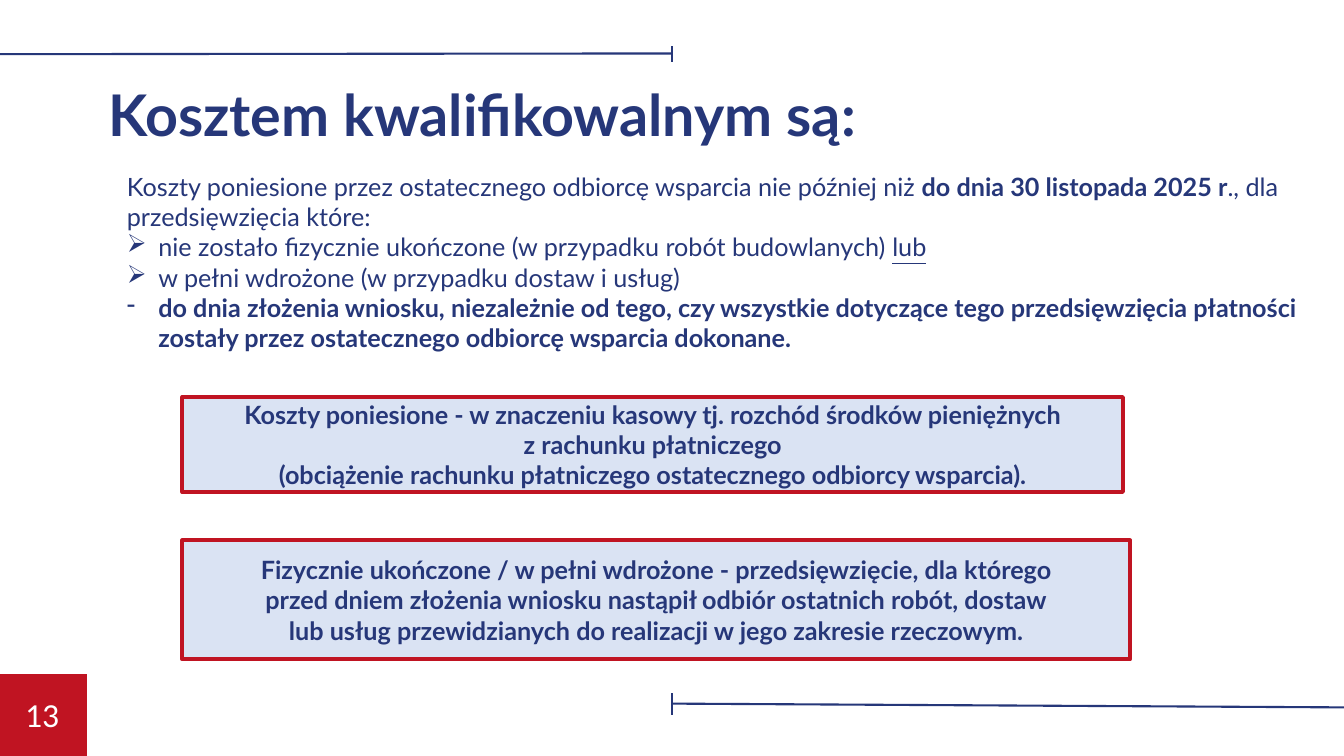
from dataclasses import dataclass

from lxml import etree
from pptx import Presentation
from pptx.dml.color import RGBColor
from pptx.enum.shapes import MSO_CONNECTOR, MSO_SHAPE
from pptx.enum.text import MSO_ANCHOR, PP_ALIGN
from pptx.oxml.ns import qn
from pptx.util import Pt


@dataclass(frozen=True)
class Theme:
    navy: RGBColor = RGBColor(0x26, 0x37, 0x79)
    red: RGBColor = RGBColor(0xC0, 0x14, 0x22)
    pale: RGBColor = RGBColor(0xDA, 0xE3, 0xF3)
    white: RGBColor = RGBColor(0xFF, 0xFF, 0xFF)
    font: str = "Lato"
    number_font: str = "Calibri"
    title: float = 41
    body: float = 18
    number: float = 24
    rule: float = 1.5
    border: float = 3


THEME = Theme()
WIDTH, HEIGHT = 960, 540
INDENT = 22.5

BODY = [
    (None, [("Koszty poniesione przez ostatecznego odbiorcę wsparcia nie później niż ", ""),
            ("do dnia 30 listopada 2025 r", "b"),
            ("., dla przedsięwzięcia które:", "")]),
    ("➢", [("nie zostało fizycznie ukończone (w przypadku robót budowlanych) ", ""),
           ("lub", "u")]),
    ("➢", [("w pełni wdrożone (w przypadku dostaw i usług)", "")]),
    ("-", [("do dnia złożenia wniosku, niezależnie od tego, czy wszystkie dotyczące tego "
            "przedsięwzięcia płatności zostały przez ostatecznego odbiorcę wsparcia dokonane.", "b")]),
]
CASH_COSTS = [
    "Koszty poniesione - w znaczeniu kasowy tj. rozchód środków pieniężnych",
    "z rachunku płatniczego",
    "(obciążenie rachunku płatniczego ostatecznego odbiorcy wsparcia).",
]
COMPLETED = [
    "Fizycznie ukończone / w pełni wdrożone - przedsięwzięcie, dla którego",
    "przed dniem złożenia wniosku nastąpił odbiór ostatnich robót, dostaw",
    "lub usług przewidzianych do realizacji w jego zakresie rzeczowym.",
]


def style(r, size, color=THEME.navy, bold=False, font=THEME.font):
    r.font.name = font
    r.font.size = Pt(size)
    r.font.bold = bold
    r.font.color.rgb = color


def add_rect(slide, box, fill):
    sp = slide.shapes.add_shape(MSO_SHAPE.RECTANGLE, *map(Pt, box))
    sp.shadow.inherit = False
    sp.fill.solid()
    sp.fill.fore_color.rgb = fill
    sp.line.fill.background()
    return sp


def add_line(slide, x1, y1, x2, y2):
    line = slide.shapes.add_connector(MSO_CONNECTOR.STRAIGHT, *map(Pt, (x1, y1, x2, y2)))
    line.line.color.rgb = THEME.navy
    line.line.width = Pt(THEME.rule)
    etree.SubElement(line._element.spPr, qn("a:effectLst"))


def add_rule(slide, edge_x, edge_y, tick_x, tick_y, tick_top, tick_bottom):
    add_line(slide, edge_x, edge_y, tick_x, tick_y)
    add_line(slide, tick_x, tick_top, tick_x, tick_bottom)


def add_page_number(slide, box, number):
    left, top, width, height = box
    add_rect(slide, box, THEME.red)
    tb = slide.shapes.add_textbox(Pt(left + 10.8), Pt(top + 10.8), Pt(width - 21), Pt(36))
    tf = tb.text_frame
    tf.word_wrap = True
    tf.text = number
    style(tf.paragraphs[0].runs[0], THEME.number, THEME.white, font=THEME.number_font)


def add_title(slide, box, text):
    title = slide.shapes.title
    title.left, title.top, title.width, title.height = map(Pt, box)
    tf = title.text_frame
    tf.text = text
    tf.vertical_anchor = MSO_ANCHOR.TOP
    p = tf.paragraphs[0]
    p.alignment = PP_ALIGN.LEFT
    style(p.runs[0], THEME.title, bold=True)


def add_bullet(p, char):
    pPr = p._p.get_or_add_pPr()
    pPr.set("marL", str(Pt(INDENT)))
    pPr.set("indent", str(-Pt(INDENT)))
    etree.SubElement(pPr, qn("a:buChar")).set("char", char)


def add_body(slide, box, items):
    tf = slide.shapes.add_textbox(*map(Pt, box)).text_frame
    tf.word_wrap = True
    for i, (bullet, runs) in enumerate(items):
        p = tf.add_paragraph() if i else tf.paragraphs[0]
        if bullet:
            add_bullet(p, bullet)
        for text, mark in runs:
            r = p.add_run()
            r.text = text
            style(r, THEME.body, bold=mark == "b")
            r.font.underline = mark == "u"


def add_callout(slide, box, lines):
    sp = add_rect(slide, box, THEME.pale)
    sp.line.color.rgb = THEME.red
    sp.line.width = Pt(THEME.border)
    tf = sp.text_frame
    tf.word_wrap = True
    tf.vertical_anchor = MSO_ANCHOR.MIDDLE
    tf.text = "\n".join(lines)
    for p in tf.paragraphs:
        p.alignment = PP_ALIGN.CENTER
        style(p.runs[0], THEME.body, bold=True)


def build_costs_slide(prs):
    slide = prs.slides.add_slide(prs.slide_layouts[5])
    add_page_number(slide, (0, 481.5, 62, 61), "13")
    add_rule(slide, 0, 38.7, WIDTH / 2, 38.2, 33, 44)
    add_rule(slide, WIDTH, 505.3, WIDTH / 2, 502.6, 495.3, 510.5)
    add_title(slide, (70, 52.6, 803, 57), "Kosztem kwalifikowalnym są:")
    add_body(slide, (83.5, 118.8, 857.5, 160), BODY)
    add_callout(slide, (130.3, 283.7, 671.8, 67.7), CASH_COSTS)
    add_callout(slide, (130.3, 386, 676.8, 85), COMPLETED)


def main():
    prs = Presentation()
    prs.slide_width, prs.slide_height = Pt(WIDTH), Pt(HEIGHT)
    build_costs_slide(prs)
    prs.save("out.pptx")


if __name__ == "__main__":
    main()
